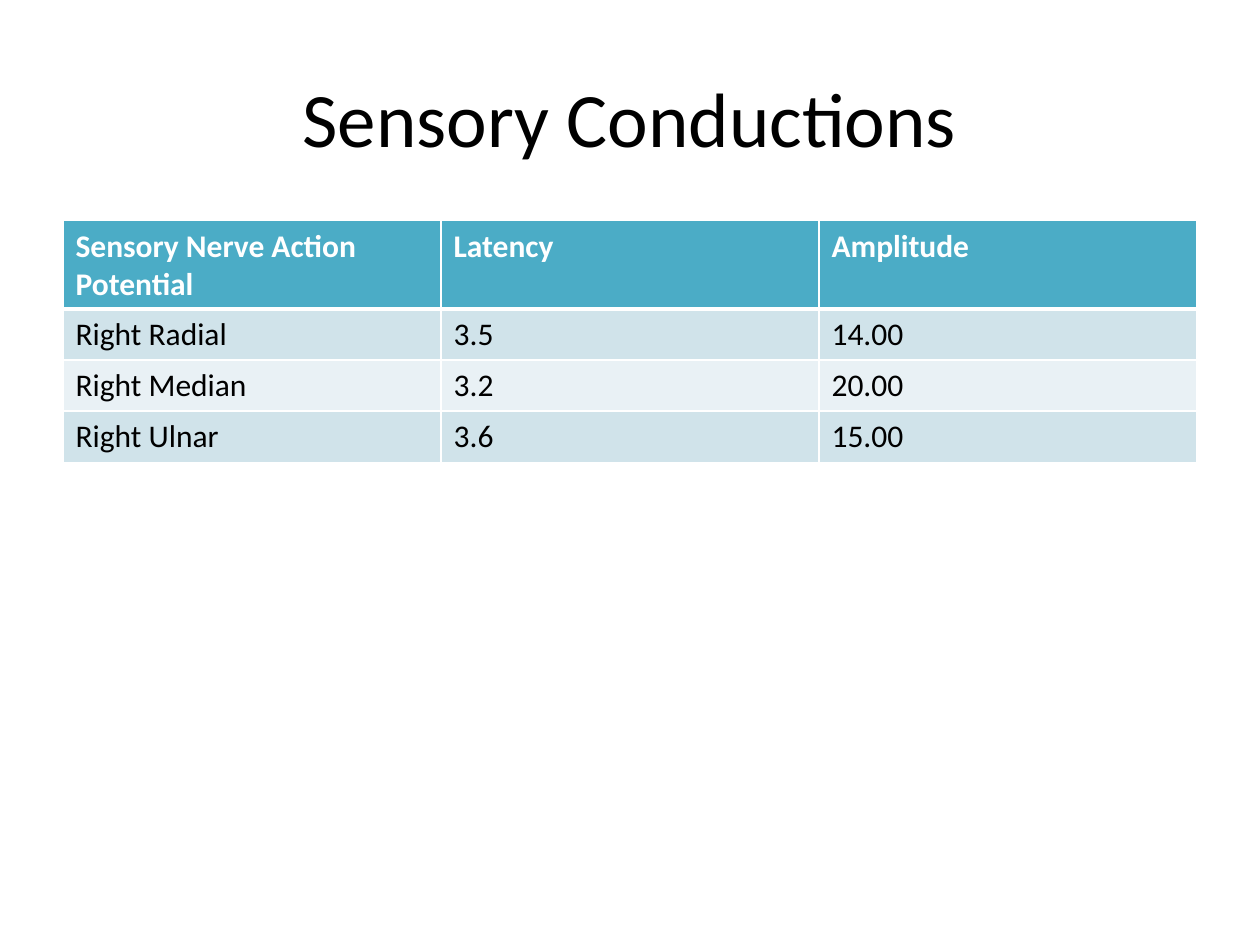
from lxml import etree
from pptx import Presentation
from pptx.dml.color import RGBColor
from pptx.enum import text
from pptx.oxml import ns
from pptx.util import Cm, Pt

# Content
TITLE = "Sensory Conductions"
ROWS = [
    ("Sensory Nerve Action Potential", "Latency", "Amplitude"),
    ("Right Radial", "3.5", "14.00"),
    ("Right Median", "3.2", "20.00"),
    ("Right Ulnar", "3.6", "15.00"),
]

THEME = {
    "font": "Calibri", "title_size": 44, "table_size": 18,
    "ink": "000000", "header_ink": "FFFFFF", "header": "4BACC6",
    "bands": ("D0E3EA", "E9F1F5"), "rule": "FFFFFF",
    "thin": 1, "thick": 3,
}

# Layout in cm
MARGIN, WIDTH = 1.27, 22.86
TITLE_TOP, TITLE_HEIGHT = 0.76, 3.18
TABLE_TOP, HEADER_HEIGHT, ROW_HEIGHT = 4.45, 1.78, 1.03


def put_text(tf, content, size, color, bold=False, align=text.PP_ALIGN.LEFT):
    p = tf.paragraphs[0]
    p.alignment = align
    r = p.add_run()
    r.text = content
    r.font.name = THEME["font"]
    r.font.size = Pt(size)
    r.font.bold = bold
    r.font.color.rgb = RGBColor.from_string(color)


def set_borders(cell, **widths):
    tc_pr = cell._tc.get_or_add_tcPr()
    for side in "LRTB":
        width = widths.get(side, THEME["thin"])
        ln = etree.SubElement(tc_pr, ns.qn(f"a:ln{side}"), w=str(Pt(width)))
        fill = etree.SubElement(ln, ns.qn("a:solidFill"))
        etree.SubElement(fill, ns.qn("a:srgbClr"), val=THEME["rule"])


def add_title(s):
    sp = s.shapes.add_textbox(Cm(MARGIN), Cm(TITLE_TOP), Cm(WIDTH), Cm(TITLE_HEIGHT))
    tf = sp.text_frame
    tf.word_wrap = True
    tf.vertical_anchor = text.MSO_ANCHOR.MIDDLE
    put_text(tf, TITLE, THEME["title_size"], THEME["ink"], align=text.PP_ALIGN.CENTER)


def add_results(s):
    heights = [HEADER_HEIGHT] + [ROW_HEIGHT] * (len(ROWS) - 1)
    table = s.shapes.add_table(len(ROWS), len(ROWS[0]), Cm(MARGIN), Cm(TABLE_TOP),
                               Cm(WIDTH), Cm(sum(heights))).table
    for i, (values, height) in enumerate(zip(ROWS, heights)):
        table.rows[i].height = Cm(height)
        header = i == 0
        fill = THEME["header"] if header else THEME["bands"][(i - 1) % 2]
        ink = THEME["header_ink"] if header else THEME["ink"]
        # The heavy rule is shared by the header and the first data row
        heavy = {0: {"B": THEME["thick"]}, 1: {"T": THEME["thick"]}}.get(i, {})
        for j, value in enumerate(values):
            cell = table.cell(i, j)
            set_borders(cell, **heavy)
            cell.fill.solid()
            cell.fill.fore_color.rgb = RGBColor.from_string(fill)
            put_text(cell.text_frame, value, THEME["table_size"], ink, bold=header)


def main():
    prs = Presentation()
    prs.slide_width, prs.slide_height = Cm(25.4), Cm(19.05)
    s = prs.slides.add_slide(prs.slide_layouts[6])
    add_title(s)
    add_results(s)
    prs.save("out.pptx")


if __name__ == "__main__":
    main()
